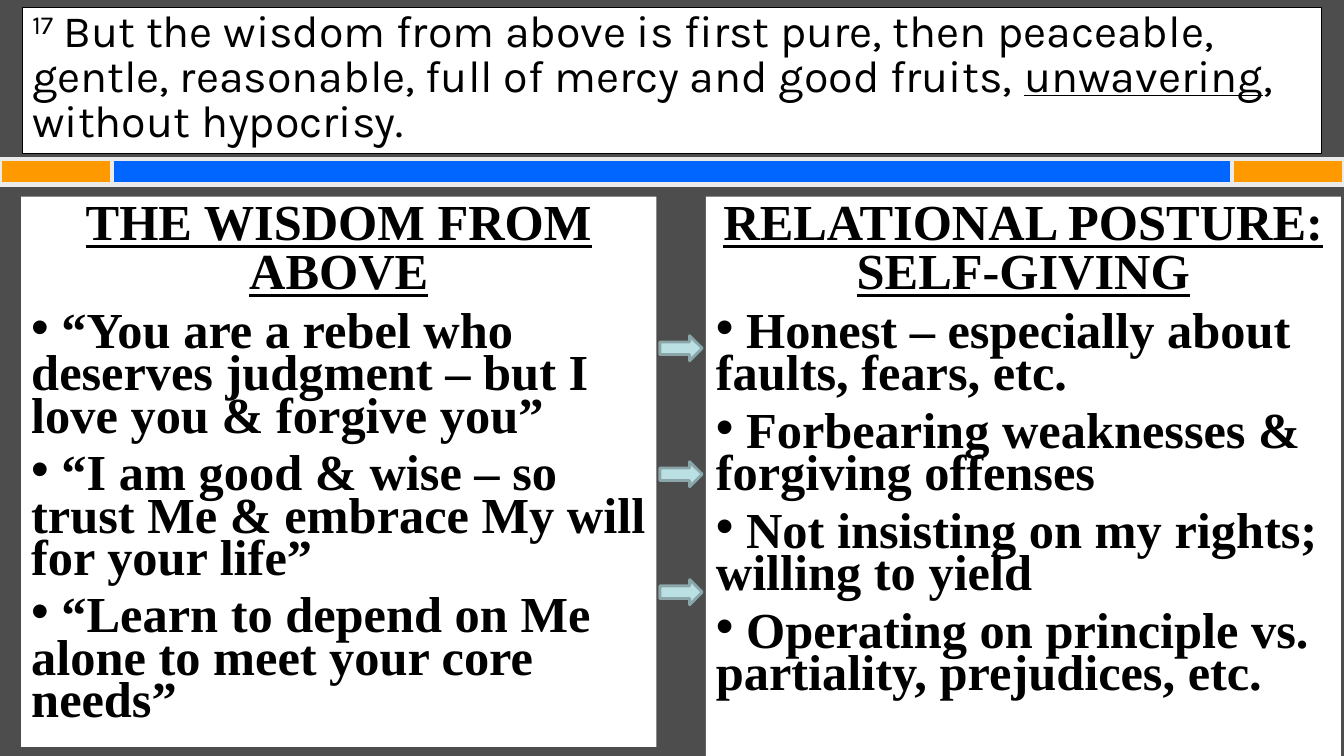
"""Build a slide that pairs the wisdom from above with a self-giving posture."""
from dataclasses import dataclass

from lxml.etree import SubElement
from pptx import Presentation
from pptx.dml.color import RGBColor
from pptx.enum.shapes import MSO_SHAPE
from pptx.enum.text import MSO_ANCHOR, MSO_AUTO_SIZE, PP_ALIGN
from pptx.oxml.ns import qn
from pptx.util import Inches, Pt

VERSE = [
    ("17", "super"),
    (" But the wisdom from above is first pure, then peaceable, gentle, "
     "reasonable, full of mercy and good fruits, ", ""),
    ("unwavering", "under"),
    (", without hypocrisy.", ""),
]
PANELS = [
    ("THE WISDOM FROM ABOVE", 5.46, [
        " “You are a rebel who deserves judgment – but I love you & forgive you”",
        " “I am good & wise – so trust Me & embrace My will for your life”",
        " “Learn to depend on Me alone to meet your core needs”",
    ]),
    ("RELATIONAL POSTURE:\vSELF-GIVING", 5.64, [
        " Honest – especially about faults, fears, etc.",
        " Forbearing weaknesses & forgiving offenses",
        " Not insisting on my rights; willing to yield",
        " Operating on principle vs. partiality, prejudices, etc.",
    ]),
]
ARROWS = [3.33, 4.58, 5.75]


@dataclass(frozen=True)
class Theme:
    back: str = "4D4D4D"
    paper: str = "FFFFFF"
    ink: str = "000000"
    blue: str = "0066FF"
    gold: str = "FF9900"
    trim: str = "EAEAEA"
    arrow: str = "BBE0E3"
    edge: str = "8AA6A8"
    sans: str = "Karla"
    serif: str = "Times New Roman"
    verse: int = 32
    list: int = 36


LOOK = Theme()
WIDE, HIGH = 13.33, 7.5
SIDE = WIDE / 12
LEFT, TOP, COL, GAP = 0.21, 1.95, 6.3, 0.49
ARROW = 0.42


def paint(shape, fill, line=None, width=0):
    shape.fill.solid()
    shape.fill.fore_color.rgb = RGBColor.from_string(fill)
    if line:
        shape.line.color.rgb = RGBColor.from_string(line)
        shape.line.width = Pt(width)


def draw(slide, kind, box, fill, line, width):
    shape = slide.shapes.add_shape(kind, *map(Inches, box))
    shape.shadow.inherit = False
    paint(shape, fill, line, width)


def place(shape, box):
    shape.left, shape.top, shape.width, shape.height = map(Inches, box)
    frame = shape.text_frame
    frame.word_wrap = True
    frame.auto_size = MSO_AUTO_SIZE.NONE
    frame.vertical_anchor = MSO_ANCHOR.TOP
    return frame


def style(para, face, size, space, before=0, bold=False):
    para.line_spacing = space
    para.space_before = Pt(before)
    para.font.name = face
    para.font.size = Pt(size)
    para.font.bold = bold
    para.font.color.rgb = RGBColor.from_string(LOOK.ink)


def mark(para, char=None):
    props = para._p.get_or_add_pPr()
    props.set("marL", "0")
    props.set("indent", "0")
    if char:
        SubElement(props, qn("a:buChar")).set("char", char)
    else:
        SubElement(props, qn("a:buNone"))


def fill_verse(shape):
    frame = place(shape, (0.22, 0.07, 12.89, 1.45))
    paint(shape, LOOK.paper, LOOK.ink, 0.75)
    para = frame.paragraphs[0]
    para.alignment = PP_ALIGN.LEFT
    style(para, LOOK.sans, LOOK.verse, Pt(32))
    for text, kind in VERSE:
        run = para.add_run()
        run.text = text
        if kind == "under":
            run.font.underline = True
        elif kind == "super":
            run._r.get_or_add_rPr().set("baseline", "30000")


def fill_panel(shape, col, head, tall, items):
    frame = place(shape, (LEFT + col * (COL + GAP), TOP, COL, tall))
    paint(shape, LOOK.paper)
    para = frame.paragraphs[0]
    para.text = head
    para.alignment = PP_ALIGN.CENTER
    style(para, LOOK.serif, LOOK.list, Pt(35), bold=True)
    para.font.underline = True
    mark(para)
    for item in items:
        para = frame.add_paragraph()
        para.text = item
        style(para, LOOK.serif, LOOK.list, 0.7, 0.3 * LOOK.list, True)
        mark(para, "•")


def main():
    deck = Presentation()
    deck.slide_width, deck.slide_height = Inches(WIDE), Inches(HIGH)
    slide = deck.slides.add_slide(deck.slide_layouts[3])
    slide.background.fill.solid()
    slide.background.fill.fore_color.rgb = RGBColor.from_string(LOOK.back)
    title, *bodies = slide.placeholders
    bars = [(0, WIDE, LOOK.blue), (0, SIDE, LOOK.gold),
            (WIDE - SIDE, SIDE, LOOK.gold)]
    for left, width, fill in bars:
        draw(slide, MSO_SHAPE.RECTANGLE, (left, 1.58, width, 0.25),
             fill, LOOK.trim, 3)
    for col, (body, panel) in enumerate(zip(bodies, PANELS)):
        fill_panel(body, col, *panel)
    for top in ARROWS:
        left = LEFT + COL + (GAP - ARROW) / 2
        draw(slide, MSO_SHAPE.RIGHT_ARROW, (left, top, ARROW, 0.25),
             LOOK.arrow, LOOK.edge, 2)
    fill_verse(title)
    deck.save("out.pptx")


if __name__ == "__main__":
    main()
